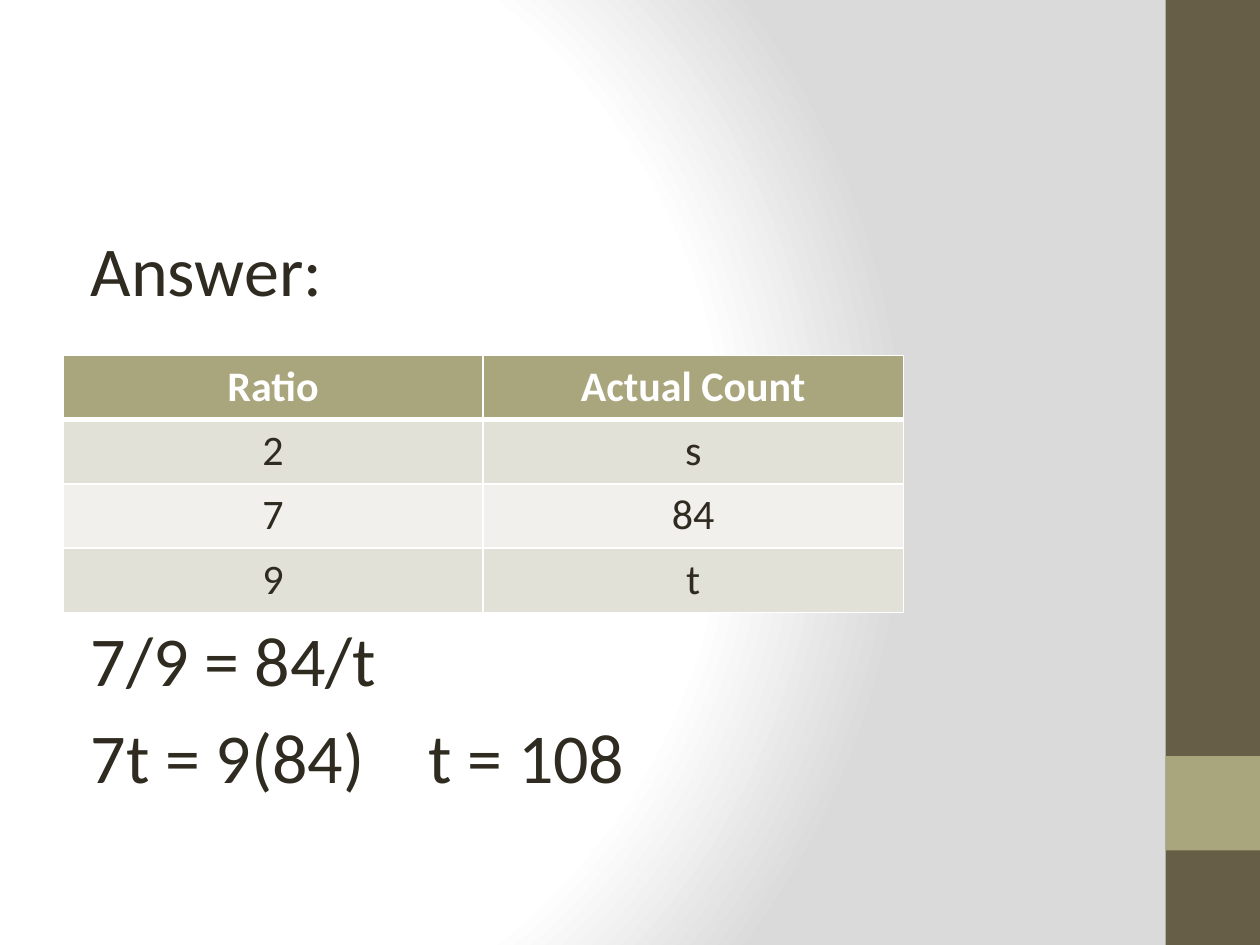
from lxml import etree
from pptx import Presentation
from pptx.dml.color import RGBColor
from pptx.enum.shapes import MSO_SHAPE as Shape
from pptx.enum.text import PP_ALIGN as Align
from pptx.oxml import parse_xml
from pptx.oxml.ns import nsdecls, qn
from pptx.util import Inches, Pt

# Content
LINES = [("Answer:", 7), ("7/9 = 84/t", 175), ("7t = 9(84)\tt = 108", 7)]  # text, points before
ROWS = [("Ratio", "Actual Count"), ("2", "s"), ("7", "84"), ("9", "t")]

FONT = "Calibri"
COLORS = {"ink": "2F2B20", "white": "FFFFFF", "gray": "DADADA", "brown": "675E47",
          "olive": "A9A57C", "band": "E2E1D7", "light": "F1F0EC"}
BARS = [(0, 7.5, "brown"), (6, 0.75, "olive")]  # top, height, colour
STOPS = [(0, "white"), (75, "white"), (100, "gray")]
TAB_STOP = 2.68
ROW_HEIGHT = 0.51


def rgb(name):
    return RGBColor.from_string(COLORS[name])


def style(para, size, color, bold=False):
    for span in para.runs:
        span.font.name = FONT
        span.font.size = Pt(size)
        span.font.bold = bold
        span.font.color.rgb = rgb(color)


def add_border(cell, side, width):
    line = parse_xml(
        f'<a:{side} {nsdecls("a")} w="{Pt(width)}"><a:solidFill>'
        f'<a:srgbClr val="{COLORS["white"]}"/></a:solidFill></a:{side}>')
    properties = cell._tc.get_or_add_tcPr()
    position = len(properties.findall("*")) - 1  # borders come before the fill
    properties.insert(position, line)


deck = Presentation()
deck.slide_width, deck.slide_height = Inches(10), Inches(7.5)
page = deck.slides.add_slide(deck.slide_layouts[6])

# Radial background
page.background.fill.solid()
background = page.element.find(".//" + qn("p:bgPr"))
stops = "".join(f'<a:gs pos="{pos * 1000}"><a:srgbClr val="{COLORS[name]}"/></a:gs>'
                for pos, name in STOPS)
background.replace(background[0], parse_xml(
    f'<a:gradFill {nsdecls("a")} rotWithShape="1"><a:gsLst>{stops}</a:gsLst>'
    '<a:path path="circle"><a:fillToRect l="20000" t="50000" r="100000" b="50000"/>'
    '</a:path></a:gradFill>'))

# Side bars
for top, height, color in BARS:
    bar = page.shapes.add_shape(Shape.RECTANGLE, Inches(9.25), Inches(top),
                                Inches(0.75), Inches(height))
    bar.shadow.inherit = False
    bar.fill.solid()
    bar.fill.fore_color.rgb = rgb(color)
    bar.line.fill.background()

# Answer and working, with room for the table between them
box = page.shapes.add_textbox(Inches(0.5), Inches(1.75), Inches(8.33), Inches(5.25))
frame = box.text_frame
frame.word_wrap = True
frame.margin_left = Inches(0.22)
for index, (text, space) in enumerate(LINES):
    para = frame.add_paragraph() if index else frame.paragraphs[0]
    para.text = text
    para.space_before = Pt(space)
    style(para, 40, "ink")
    if "\t" in text:
        tabs = etree.SubElement(para._p.get_or_add_pPr(), qn("a:tabLst"))
        etree.SubElement(tabs, qn("a:tab"), pos=str(Inches(TAB_STOP)), algn="l")

# Ratio table
table = page.shapes.add_table(len(ROWS), len(ROWS[0]), Inches(0.5), Inches(2.82),
                              Inches(6.67), Inches(ROW_HEIGHT * len(ROWS))).table
for row_index, values in enumerate(ROWS):
    header = row_index == 0
    fill = "olive" if header else "band" if row_index % 2 else "light"
    for column_index, value in enumerate(values):
        cell = table.cell(row_index, column_index)
        cell.text = value
        para = cell.text_frame.paragraphs[0]
        para.alignment = Align.CENTER
        style(para, 24, "white" if header else "ink", header)
        cell.fill.solid()
        cell.fill.fore_color.rgb = rgb(fill)
        for side in ("lnL", "lnR", "lnT", "lnB"):
            thick = (row_index, side) in ((0, "lnB"), (1, "lnT"))
            add_border(cell, side, 3 if thick else 1)

deck.save("out.pptx")
